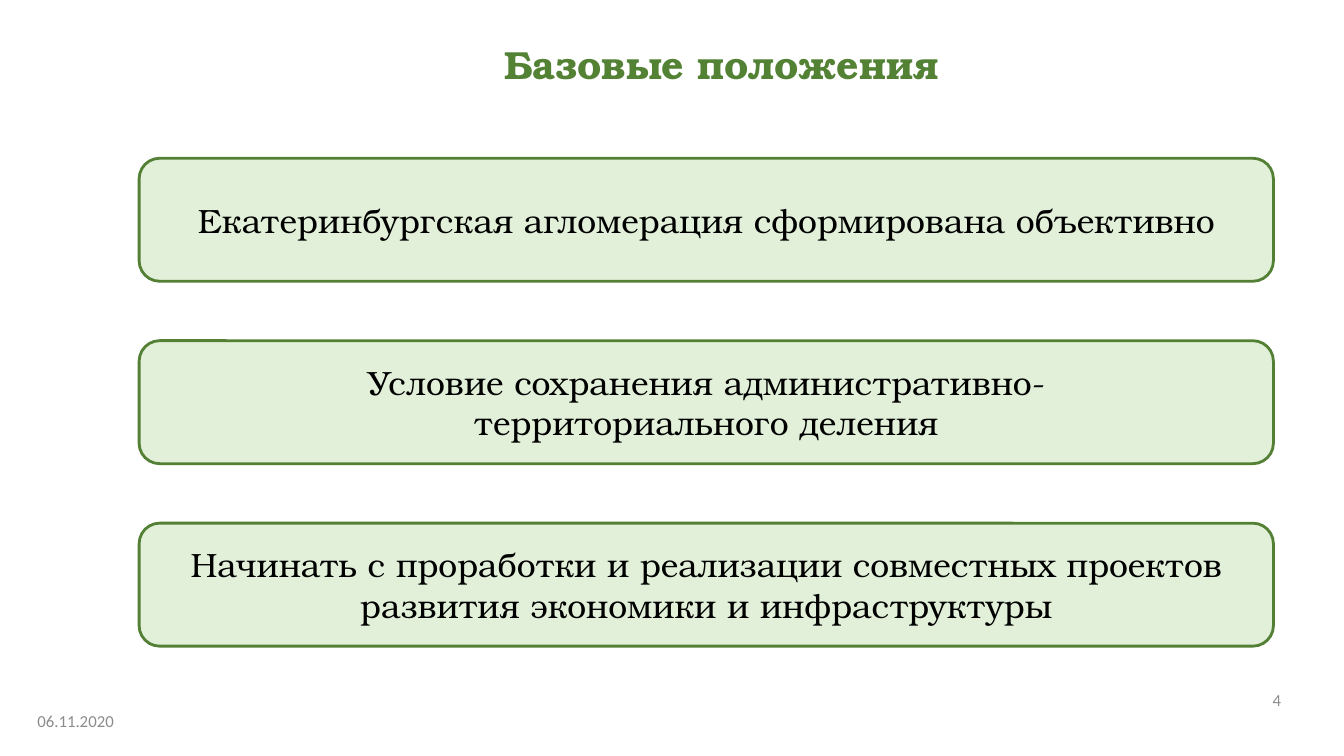
from pptx import Presentation
from pptx.dml.color import RGBColor
from pptx.enum import shapes, text
from pptx.util import Inches, Pt

TITLE_GREEN = RGBColor(0x54, 0x82, 0x35)
BORDER_GREEN = RGBColor(0x53, 0x80, 0x35)
PALE_GREEN = RGBColor(0xE2, 0xF0, 0xD9)
BLACK = RGBColor(0, 0, 0)
GRAY = RGBColor(0x8C, 0x8C, 0x8C)

SERIF = "TeX Gyre Bonum"
SANS = "Calibri"

# "\v" is a line break inside the paragraph
PROVISIONS = [
    "Екатеринбургская агломерация сформирована объективно",
    "Условие сохранения административно-\vтерриториального деления",
    "Начинать с проработки и реализации совместных проектов "
    "развития экономики и инфраструктуры",
]


def write(shape, wording, font, size, color, align=text.PP_ALIGN.CENTER,
          bold=False, side_inset=0.1):
    frame = shape.text_frame
    frame.word_wrap = True
    frame.vertical_anchor = text.MSO_ANCHOR.MIDDLE
    frame.margin_left = frame.margin_right = Inches(side_inset)
    paragraph = frame.paragraphs[0]
    paragraph.text = wording
    paragraph.alignment = align
    paragraph.font.name = font
    paragraph.font.size = Pt(size)
    paragraph.font.bold = bold
    paragraph.font.color.rgb = color


def add_label(slide, box, *args, **options):
    label = slide.shapes.add_textbox(*map(Inches, box))
    write(label, *args, **options)


def add_provisions(slide, left, top, width, height, gap=0.59):
    """Stack equal rounded cards that fill the given box."""
    count = len(PROVISIONS)
    card_height = (height - gap * (count - 1)) / count
    for row, wording in enumerate(PROVISIONS):
        card_top = top + row * (card_height + gap)
        card = slide.shapes.add_shape(
            shapes.MSO_SHAPE.ROUNDED_RECTANGLE,
            Inches(left), Inches(card_top), Inches(width), Inches(card_height))
        card.shadow.inherit = False
        card.fill.solid()
        card.fill.fore_color.rgb = PALE_GREEN
        card.line.color.rgb = BORDER_GREEN
        card.line.width = Pt(2)
        write(card, wording, SERIF, 24, BLACK)


def add_footer(slide, date_box, number_box):
    add_label(slide, date_box, "06.11.2020", SANS, 12, GRAY,
              align=text.PP_ALIGN.LEFT, side_inset=0)
    add_label(slide, number_box, "4", SANS, 12, GRAY)


def main():
    deck = Presentation()
    deck.slide_width, deck.slide_height = Inches(13.33), Inches(7.5)
    slide = deck.slides.add_slide(deck.slide_layouts[6])
    add_label(slide, (2.18, 0.38, 9.95, 0.51), "Базовые положения",
              SERIF, 28, TITLE_GREEN, bold=True, side_inset=0)
    add_provisions(slide, 1.38, 1.57, 11.25, 4.84)
    add_footer(slide, (0.37, 6.95, 1.15, 0.4), (12.37, 6.74, 0.59, 0.4))
    deck.save("out.pptx")


if __name__ == "__main__":
    main()
